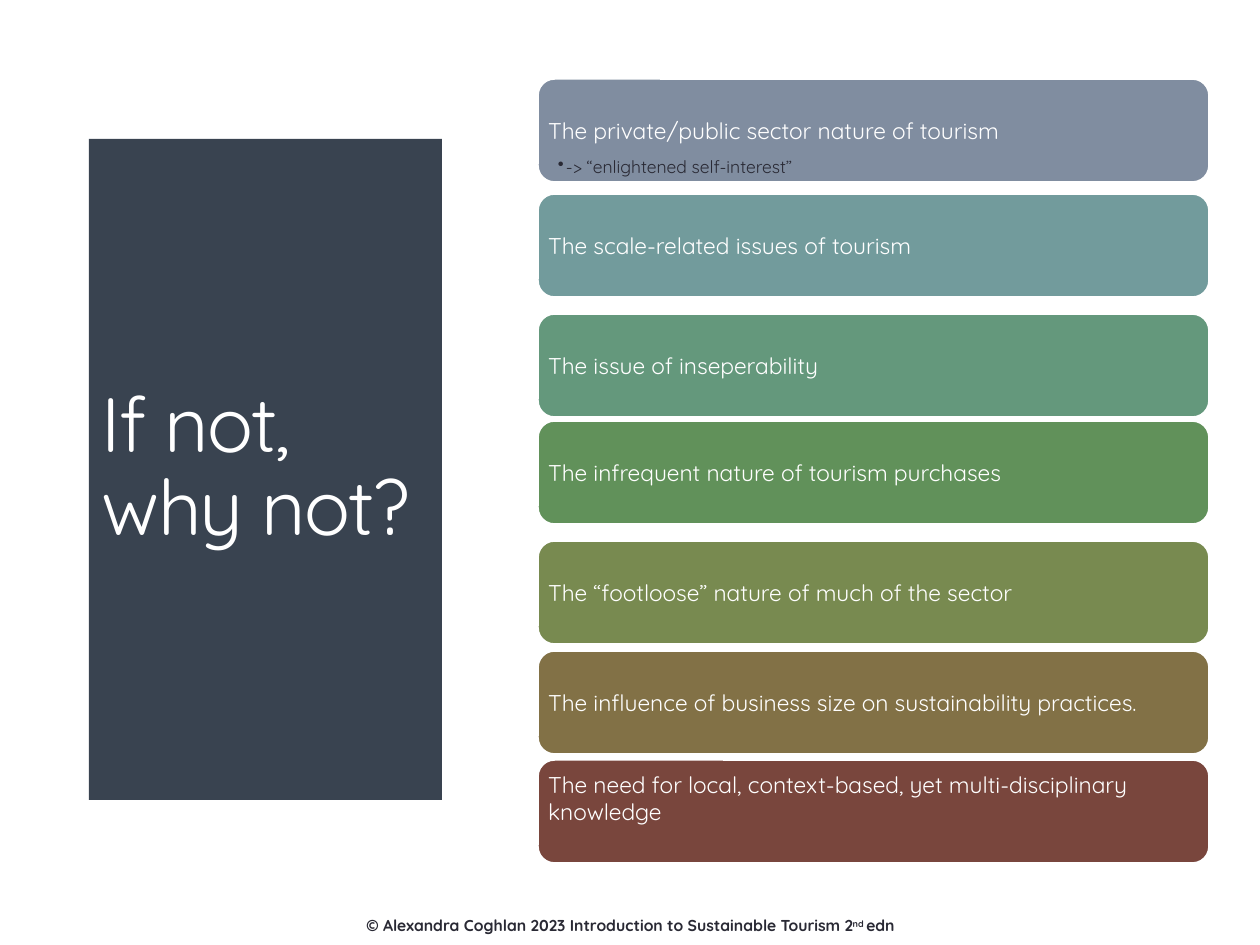
"""Build the "If not, why not?" slide on barriers to sustainable tourism."""
from lxml import etree
from pptx import Presentation
from pptx import util as u
from pptx.dml.color import RGBColor
from pptx.enum import shapes, text
from pptx.oxml import ns

PX = 914400 / 126
FONT = "Quicksand"
WHITE = RGBColor(0xFF, 0xFF, 0xFF)
INK = RGBColor(0x29, 0x29, 0x34)
SLATE = RGBColor(0x39, 0x43, 0x50)

REASON_LEFT, REASON_WIDTH, REASON_HEIGHT = 537, 673, 105
LINE_HEIGHT = 27
REASONS = [
    (78, RGBColor(0x80, 0x8D, 0xA0), "The private/public sector nature of tourism"),
    (193, RGBColor(0x72, 0x9B, 0x9C), "The scale-related issues of tourism"),
    (313, RGBColor(0x64, 0x98, 0x7C), "The issue of inseperability"),
    (420, RGBColor(0x61, 0x91, 0x5A), "The infrequent nature of tourism purchases"),
    (540, RGBColor(0x78, 0x8A, 0x50), "The “footloose” nature of much of the sector"),
    (650, RGBColor(0x82, 0x71, 0x46),
     "The influence of business size on sustainability practices."),
    (759, RGBColor(0x79, 0x46, 0x3D),
     "The need for local, context-based, yet multi-disciplinary knowledge"),
]


def px(*lengths):
    return [u.Emu(round(length * PX)) for length in lengths]


def style(paragraph, size, color, bold=False):
    font = paragraph.font
    font.name, font.size, font.bold = FONT, u.Pt(size), bold
    font.color.rgb = color


def set_frame(frame, insets, anchor):
    frame.word_wrap = True
    frame.auto_size = text.MSO_AUTO_SIZE.NONE
    frame.vertical_anchor = anchor
    (frame.margin_left, frame.margin_top,
     frame.margin_right, frame.margin_bottom) = px(*insets)


def add_title(slide, wording):
    title = slide.shapes.title
    title.left, title.top, title.width, title.height = px(89, 139, 353, 661)
    title.fill.solid()
    title.fill.fore_color.rgb = SLATE
    set_frame(title.text_frame, (13, 6, 13, 6), text.MSO_ANCHOR.MIDDLE)
    paragraph = title.text_frame.paragraphs[0]
    run = paragraph.add_run()
    run.text = wording
    run._r.get_or_add_rPr().set("spc", "-100")
    paragraph.alignment = text.PP_ALIGN.LEFT
    paragraph.line_spacing = 0.9
    style(paragraph, 44, WHITE)


def add_reason(slide, top, color, wording, bottom_inset=6):
    reason = slide.shapes.add_shape(
        shapes.MSO_SHAPE.ROUNDED_RECTANGLE,
        *px(REASON_LEFT, top, REASON_WIDTH, REASON_HEIGHT))
    reason.shadow.inherit = False
    reason.fill.solid()
    reason.fill.fore_color.rgb = color
    reason.line.color.rgb = WHITE
    reason.line.width = u.Pt(2.08)
    set_frame(reason.text_frame, (6, 6, 6, bottom_inset), text.MSO_ANCHOR.MIDDLE)
    paragraph = reason.text_frame.paragraphs[0]
    paragraph.text = wording
    paragraph.alignment = text.PP_ALIGN.LEFT
    style(paragraph, 13, WHITE)


def add_sub_point(slide, wording):
    box = slide.shapes.add_textbox(*px(REASON_LEFT, 154, REASON_WIDTH, 30))
    set_frame(box.text_frame, (21, 2, 12, 2), text.MSO_ANCHOR.TOP)
    paragraph = box.text_frame.paragraphs[0]
    paragraph.text = wording
    paragraph.level = 1
    properties = paragraph._p.get_or_add_pPr()
    indent = px(8)[0]
    properties.set("marL", str(indent))
    properties.set("indent", str(-indent))
    etree.SubElement(properties, ns.qn("a:buChar")).set("char", "•")
    style(paragraph, 10, INK)


def add_copyright(slide):
    box = slide.shapes.add_textbox(*px(333, 910, 595, 32))
    set_frame(box.text_frame, (13, 6, 13, 6), text.MSO_ANCHOR.TOP)
    paragraph = box.text_frame.paragraphs[0]
    pieces = [
        ("© Alexandra Coghlan 2023 Introduction to Sustainable Tourism 2", 0),
        ("nd ", 30000),
        ("edn", 0),
    ]
    for wording, baseline in pieces:
        run = paragraph.add_run()
        run.text = wording
        if baseline:
            run._r.get_or_add_rPr().set("baseline", str(baseline))
    paragraph.alignment = text.PP_ALIGN.CENTER
    style(paragraph, 9, INK, bold=True)


def main():
    deck = Presentation()
    deck.slide_width, deck.slide_height = px(1260, 945)
    slide = deck.slides.add_slide(deck.slide_layouts.get_by_name("Title Only"))
    add_title(slide, "If not, why not?")
    for reason in REASONS[:-1]:
        add_reason(slide, *reason)
    add_reason(slide, *REASONS[-1], bottom_inset=6 + LINE_HEIGHT)
    add_sub_point(slide, "-> “enlightened self-interest”")
    add_copyright(slide)
    deck.save("out.pptx")


if __name__ == "__main__":
    main()
